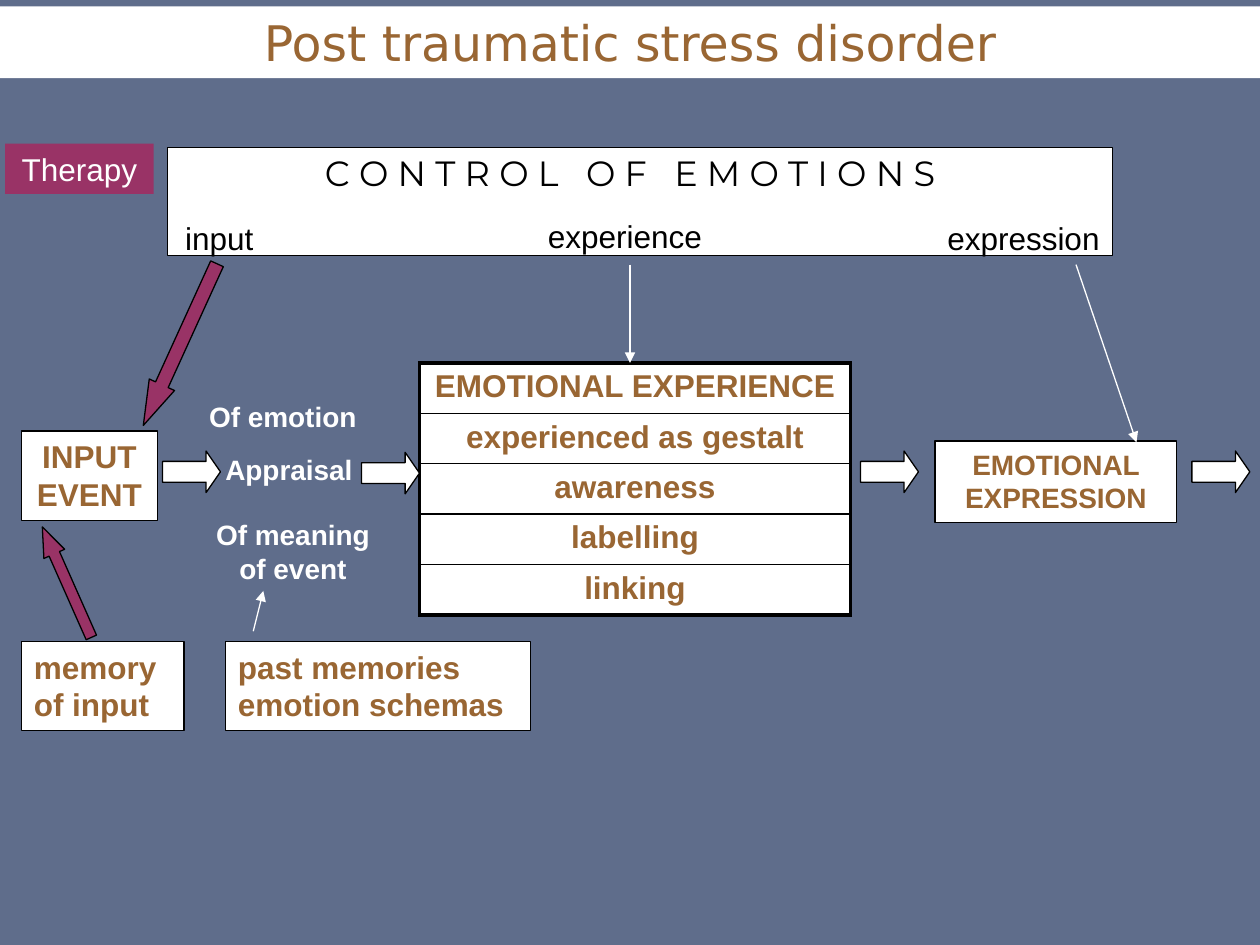
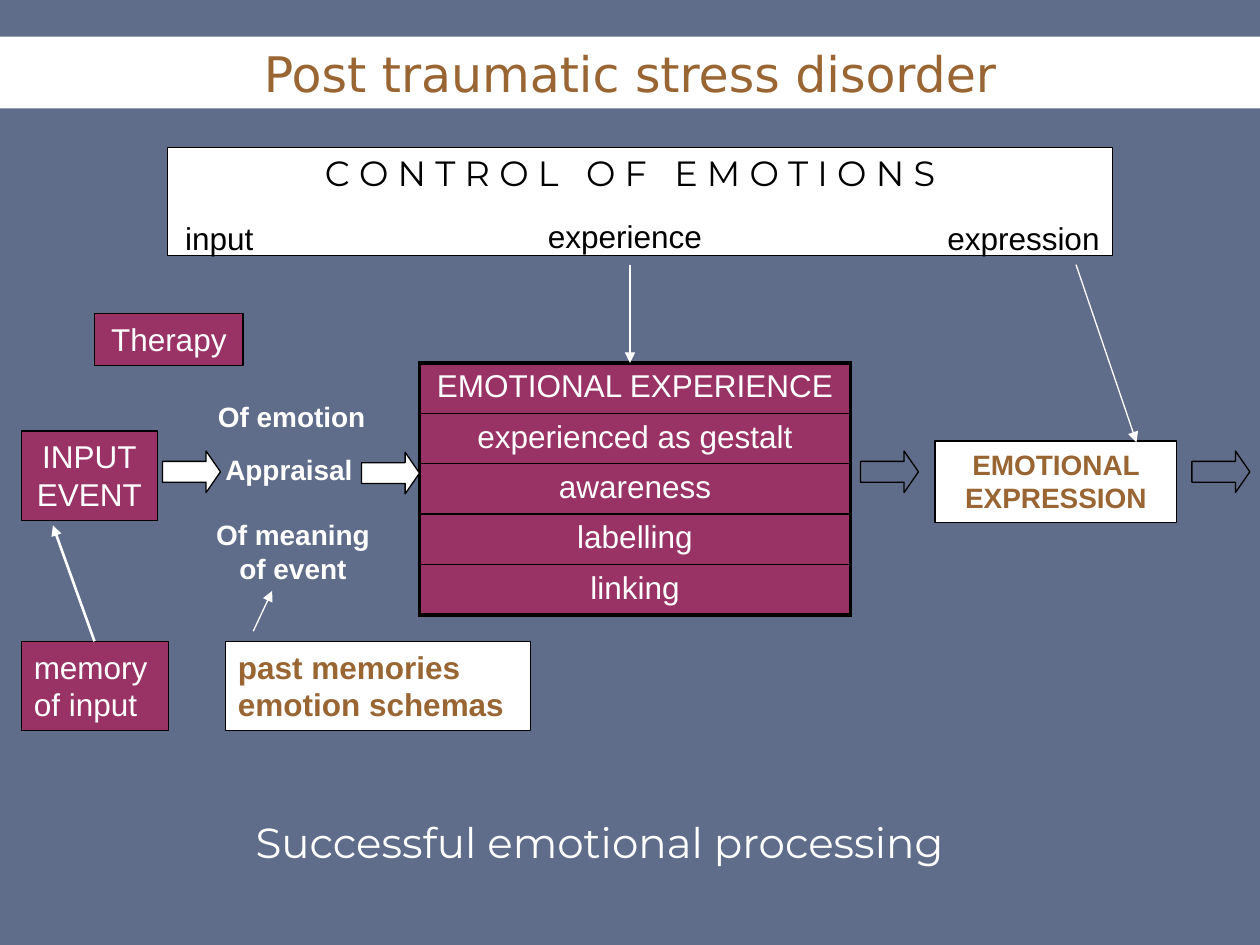
from dataclasses import dataclass
from typing import Any, Optional

from lxml import etree
from pptx import Presentation
from pptx.dml.color import RGBColor
from pptx.enum.shapes import MSO_CONNECTOR, MSO_SHAPE
from pptx.enum.text import MSO_ANCHOR, MSO_AUTO_SIZE, PP_ALIGN
from pptx.oxml.ns import qn
from pptx.util import Emu, Pt

RECT, RIGHT, DOWN = MSO_SHAPE.RECTANGLE, MSO_SHAPE.RIGHT_ARROW, MSO_SHAPE.DOWN_ARROW
STRAIGHT = MSO_CONNECTOR.STRAIGHT
LEFT, CENTER = PP_ALIGN.LEFT, PP_ALIGN.CENTER
TOP, MIDDLE = MSO_ANCHOR.TOP, MSO_ANCHOR.MIDDLE
FIXED = MSO_AUTO_SIZE.NONE

SCALE = 9144
TITLE_ONLY = 5
COLORS = {
    "slate": "5F6D8B",
    "white": "FFFFFF",
    "black": "000000",
    "brown": "996633",
    "plum": "993366",
}
SANS, ROUND, HEAD = "Arial", "Montserrat", "DejaVu Sans"
STAGES = ["EMOTIONAL EXPERIENCE", "experienced as gestalt", "awareness", "labelling", "linking"]


@dataclass(frozen=True)
class Style:
    size: int = 18
    ink: str = "black"
    bold: bool = False
    align: Any = LEFT
    face: str = SANS


@dataclass(frozen=True)
class Look:
    fill: str
    ink: str
    bold: bool

    def style(self, align: Any = LEFT, size: int = 18) -> Style:
        return Style(size, self.ink, self.bold, align)


@dataclass(frozen=True)
class Box:
    x: int
    y: int
    w: int
    h: int
    text: str = ""
    style: Style = Style()
    fill: Optional[str] = None
    edge: Optional[str] = None
    pad: int = 10


@dataclass(frozen=True)
class Arrow:
    x: int
    y: int
    w: int = 46
    h: int = 33
    fill: Optional[str] = "white"
    kind: Any = RIGHT
    head: float = 0.345
    turn: float = 0


@dataclass(frozen=True)
class Line:
    x1: int
    y1: int
    x2: int
    y2: int
    width: float = 0.75


@dataclass(frozen=True)
class Scene:
    title_y: int
    event: Look
    stage: Look
    flow: Optional[str]
    memory_w: int
    mood_x: int
    past_x: int
    extras: list


PLAIN = Look("white", "brown", True)
TREATED = Look("plum", "white", False)
LABEL = Style(16, "white", True)
MIDLABEL = Style(16, "white", True, CENTER)
THERAPY = TREATED.style(CENTER)

SCENES = [
    Scene(5, PLAIN, PLAIN, "white", 129, 153, 209, [
        Arrow(132, 203, 22, 141, "plum", DOWN, 1.611, 24.5),
        Arrow(44, 414, 18, 96, "plum", DOWN, 1.304, 156.1),
        Box(4, 114, 118, 40, "Therapy", THERAPY, "plum"),
    ]),
    Scene(29, TREATED, TREATED, None, 117, 160, 216, [
        Box(75, 249, 118, 41, "Therapy", THERAPY, "plum", "black"),
        Line(75, 509, 42, 417, 1.5),
        Box(193, 643, 653, 50, "Successful emotional processing",
            Style(24, "white", face=ROUND)),
    ]),
]


def px(n: int) -> Emu:
    return Emu(n * SCALE)


def rgb(name: str) -> RGBColor:
    return RGBColor.from_string(COLORS[name])


def paint(fill: Any, name: Optional[str]) -> None:
    if name:
        fill.solid()
        fill.fore_color.rgb = rgb(name)
    else:
        fill.background()


def trim(line: Any, name: Optional[str], width: float = 0.75) -> None:
    paint(line.fill, name)
    if name:
        line.width = Pt(width)


def write(frame: Any, text: str, style: Style) -> None:
    para = frame.paragraphs[0]
    para.text = text
    para.alignment = style.align
    font = para.font
    font.name, font.size, font.bold = style.face, Pt(style.size), style.bold
    font.color.rgb = rgb(style.ink)


def draw_box(slide: Any, box: Box) -> None:
    place = map(px, (box.x, box.y, box.w, box.h))
    if box.fill:
        shape = slide.shapes.add_shape(RECT, *place)
        shape.shadow.inherit = False
        paint(shape.fill, box.fill)
        trim(shape.line, box.edge)
    else:
        shape = slide.shapes.add_textbox(*place)
    if box.text:
        frame = shape.text_frame
        frame.word_wrap = True
        frame.vertical_anchor = TOP
        frame.margin_left = frame.margin_right = px(box.pad)
        write(frame, box.text, box.style)


def draw_arrow(slide: Any, arrow: Arrow) -> None:
    shape = slide.shapes.add_shape(arrow.kind, *map(px, (arrow.x, arrow.y, arrow.w, arrow.h)))
    shape.shadow.inherit = False
    shape.adjustments[0], shape.adjustments[1] = 0.5, arrow.head
    shape.rotation = arrow.turn
    paint(shape.fill, arrow.fill)
    trim(shape.line, "black")


def draw_line(slide: Any, line: Line) -> None:
    link = slide.shapes.add_connector(STRAIGHT, *map(px, (line.x1, line.y1, line.x2, line.y2)))
    trim(link.line, "white", line.width)
    etree.SubElement(link.line._get_or_add_ln(), qn("a:tailEnd"), type="triangle")
    etree.SubElement(link._element.spPr, qn("a:effectLst"))


def rule_cell(cell: Any, first: bool, last: bool) -> None:
    props = cell._tc.get_or_add_tcPr()
    sides = [("a:lnL", True), ("a:lnR", True), ("a:lnT", first), ("a:lnB", last)]
    for spot, (tag, thick) in enumerate(sides):
        edge = etree.Element(qn(tag), w=str(Pt(2.25 if thick else 1)))
        solid = etree.SubElement(edge, qn("a:solidFill"))
        etree.SubElement(solid, qn("a:srgbClr"), val=COLORS["black"])
        props.insert(spot, edge)


def draw_stages(slide: Any, look: Look) -> None:
    count = len(STAGES)
    table = slide.shapes.add_table(count, 1, *map(px, (333, 288, 342, 40 * count))).table
    table.first_row = table.horz_banding = False
    for row, text in enumerate(STAGES):
        cell = table.cell(row, 0)
        paint(cell.fill, look.fill)
        write(cell.text_frame, text, look.style(CENTER))
        rule_cell(cell, row == 0, row == count - 1)


def draw_title(slide: Any, y: int) -> None:
    title = slide.shapes.title
    title.left, title.top, title.width, title.height = map(px, (0, y, 1000, 57))
    paint(title.fill, "white")
    frame = title.text_frame
    frame.auto_size = FIXED
    frame.vertical_anchor = MIDDLE
    write(frame, "Post traumatic stress disorder", Style(28, "brown", False, CENTER, HEAD))


DRAW = {Box: draw_box, Arrow: draw_arrow, Line: draw_line}


def draw_scene(slide: Any, scene: Scene) -> None:
    draw_title(slide, scene.title_y)
    draw_stages(slide, scene.stage)
    event = scene.event
    parts = [
        Box(133, 117, 750, 86, fill="white", edge="black"),
        Box(248, 115, 567, 43, "C O N T R O L   O F   E M O T I O N S", Style(20, face=ROUND)),
        Box(137, 169, 95, 40, "input"),
        Box(425, 167, 150, 40, "experience"),
        Box(742, 169, 150, 40, "expression"),
        Box(17, 342, 108, 71, "INPUT\nEVENT", event.style(CENTER), event.fill, "black", 6),
        Box(17, 509, scene.memory_w, 71, "memory\nof input", event.style(), event.fill, "black"),
        Box(179, 509, 242, 71, "past memories\nemotion schemas", PLAIN.style(), "white", "black"),
        Box(742, 350, 192, 65, "EMOTIONAL EXPRESSION", PLAIN.style(CENTER, 16), "white", "black"),
        Arrow(129, 358),
        Arrow(287, 359),
        Arrow(683, 358, fill=scene.flow),
        Arrow(946, 358, fill=scene.flow),
        Line(201, 501, scene.past_x, 469),
        Line(500, 210, 500, 288),
        Line(854, 210, 902, 351),
        Box(scene.mood_x, 312, 143, 37, "Of emotion", MIDLABEL),
        Box(169, 354, 134, 37, "Appraisal", LABEL),
        Box(153, 406, 159, 64, "Of meaning of event", MIDLABEL),
    ]
    for part in parts + scene.extras:
        DRAW[type(part)](slide, part)


def main() -> None:
    deck = Presentation()
    deck.slide_width, deck.slide_height = px(1000), px(750)
    paint(deck.slide_master.background.fill, "slate")
    for scene in SCENES:
        draw_scene(deck.slides.add_slide(deck.slide_layouts[TITLE_ONLY]), scene)
    deck.save("out.pptx")


if __name__ == "__main__":
    main()
